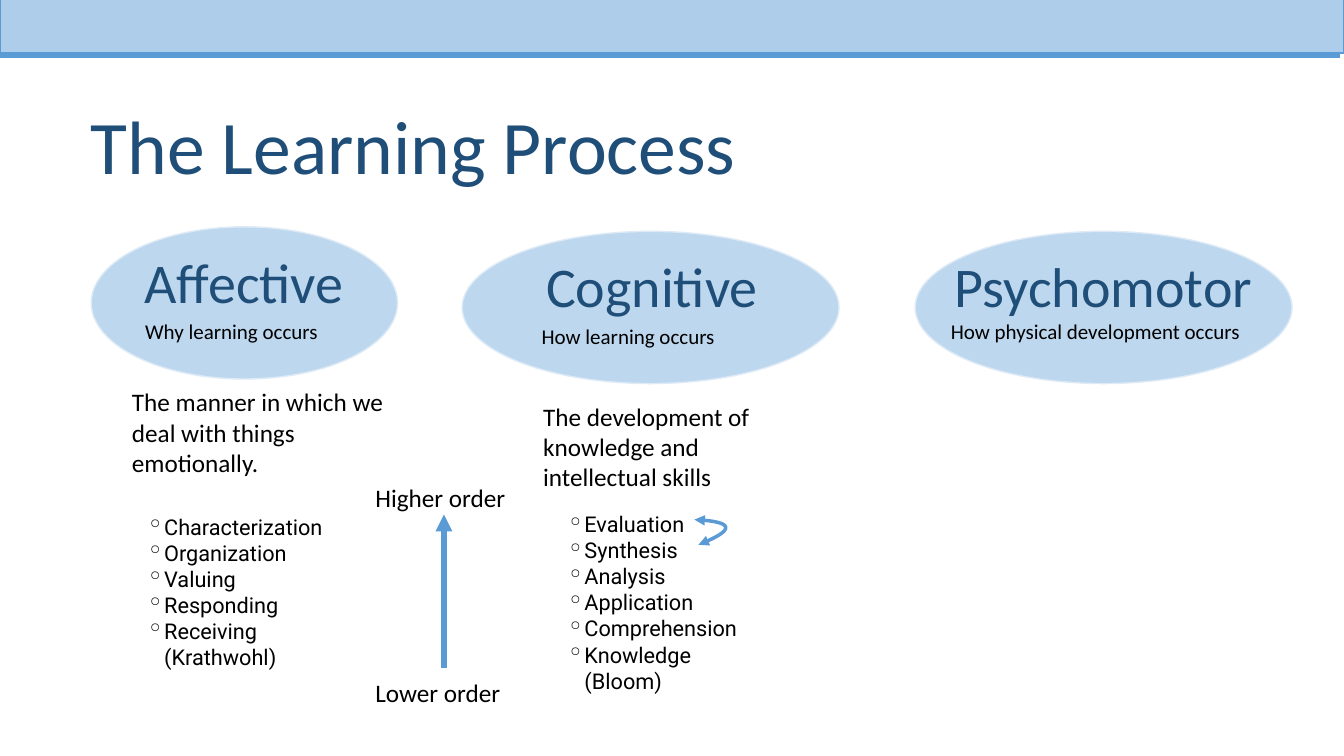
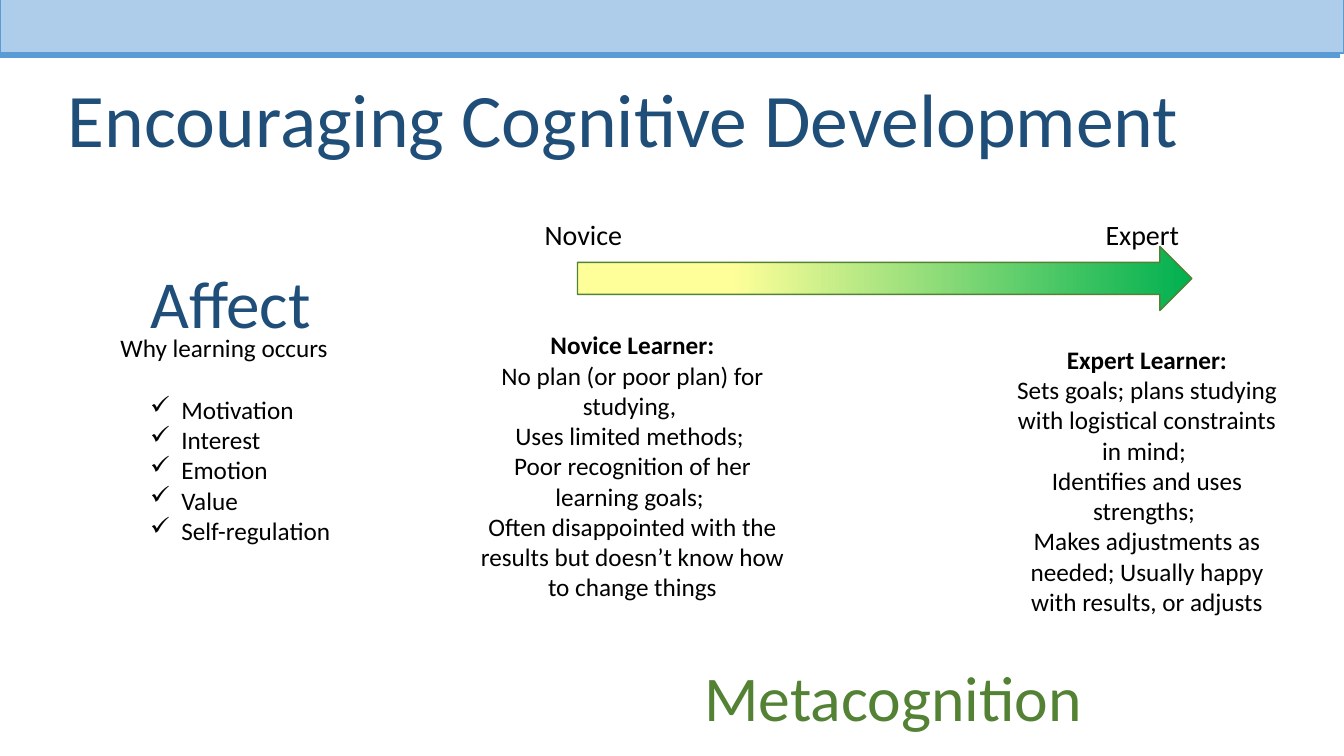
from pptx import Presentation
from pptx import util as u
from pptx.dml.color import RGBColor
from pptx.enum import shapes, text
from pptx.oxml.ns import qn
from lxml import etree

PX = 9144
COLORS = {"navy": "1F4E79", "black": "000000", "blue": "5B9BD5", "band": "ADCDEA",
          "oval": "BDD7EE", "rim": "DEEBF7", "green": "548235",
          "expert": "00B050", "novice": "FFFF99"}

BAND = (0, -2, 2667, 107)
BAND_RULE = (-7, 107, 2659, 107)
TITLE_SIZE = 108

DOMAINS = [
    {"oval": (181, 450, 608, 302),
     "name": ("Affective", (215, 481, 539, 149)),
     "gist": ("Why learning occurs", (278, 622, 396, 69)),
     "meaning": ("The manner in which we deal with things emotionally.", (252, 757, 522, 195)),
     "levels": (["Characterization", "Organization", "Valuing", "Responding",
                 "Receiving \n(Krathwohl)"], (266, 1009, 397, 328))},
    {"oval": (917, 459, 748, 302),
     "name": ("Cognitive", (991, 490, 606, 149)),
     "gist": ("How learning occurs", (1065, 632, 398, 69)),
     "meaning": ("The development of knowledge and intellectual skills", (1068, 786, 522, 195)),
     "levels": (["Evaluation", "Synthesis", "Analysis", "Application", "Comprehension",
                 "Knowledge\n(Bloom)"], (1100, 1004, 387, 380))},
    {"oval": (1816, 459, 748, 302),
     "name": ("Psychomotor", (1791, 490, 798, 149)),
     "gist": ("How physical development occurs", (1877, 622, 673, 69))},
]
ORDER_LABELS = [("Higher order", (735, 947, 303, 78)), ("Lower order", (735, 1333, 293, 78))]
ORDER_ARROW = (881, 1326, 881, 1021)
SWAP_CURVE = [(1378, 1031), (1458, 1035), (1461, 1051), (1386, 1081)]
CURVE_STEPS = 20

SCALE_ARROW = (1146, 489, 1219, 127)
SCALE_LABELS = [("Novice", (1071, 422, 188, 85)), ("Expert", (2184, 422, 184, 85))]
LEARNERS = [
    ("Novice Learner:", (943, 644, 624, 603),
     ["No plan (or poor plan) for studying, ",
      "Uses limited methods; ",
      "Poor recognition of her learning goals; ",
      "Often disappointed with the results but doesn’t know how to change things"]),
    ("Expert Learner:", (1998, 673, 556, 545),
     ["Sets goals; plans studying with logistical constraints in mind; ",
      "Identifies and uses strengths; ",
      "Makes adjustments as needed; Usually happy with results, or adjusts"]),
]
AFFECT_FACTORS = ["Motivation", "Interest", "Emotion", "Value", "Self-regulation"]


def emu(values):
    return [round(value * PX) for value in values]


def rgb(name):
    return RGBColor.from_string(COLORS[name])


def set_line(shape, color, width):
    shape.line.color.rgb = rgb(color)
    shape.line.width = u.Pt(width)


def add_heads(shape, *ends):
    outline = shape.element.spPr.find(qn("a:ln"))
    for end in ends:
        etree.SubElement(outline, qn(f"a:{end}"), type="triangle")


def add_block(page, kind, area, fill, line):
    shape = page.shapes.add_shape(kind, *emu(area))
    shape.shadow.inherit = False
    if fill:
        shape.fill.solid()
        shape.fill.fore_color.rgb = rgb(fill)
    set_line(shape, line, 2)
    return shape


def add_rule(page, ends, width):
    rule = page.shapes.add_connector(shapes.MSO_CONNECTOR.STRAIGHT, *emu(ends))
    set_line(rule, "blue", width)
    etree.SubElement(rule.element.spPr, qn("a:effectLst"))
    return rule


def add_text(page, lines, area, size, color="black", center=False, font="Calibri",
             bullet=None, indent=0, hang=0, bold_first=False):
    box = page.shapes.add_textbox(*emu(area))
    frame = box.text_frame
    frame.word_wrap = True
    frame.margin_left = frame.margin_right = frame.margin_top = frame.margin_bottom = 10 * PX
    for index, line in enumerate([lines] if isinstance(lines, str) else lines):
        para = frame.add_paragraph() if index else frame.paragraphs[0]
        if center:
            para.alignment = text.PP_ALIGN.CENTER
        if bullet:
            props = para._p.get_or_add_pPr()
            props.set("marL", str(indent * PX))
            props.set("indent", str(-hang * PX))
            etree.SubElement(props, qn("a:buChar"), char=bullet)
        for part, words in enumerate(line.split("\n")):
            if part:
                para.add_line_break()
            span = para.add_run()
            span.text = words
            span.font.name = font
            span.font.size = u.Pt(size)
            span.font.bold = bold_first and index == 0
            span.font.color.rgb = rgb(color)


def add_page(deck, title, area):
    page = deck.slides.add_slide(deck.slide_layouts[6])
    add_rule(page, BAND_RULE, 11)
    add_block(page, shapes.MSO_SHAPE.RECTANGLE, BAND, "band", "blue")
    add_text(page, title, area, TITLE_SIZE, "navy")
    return page


def add_swap_curve(page):
    points = []
    for step in range(CURVE_STEPS + 1):
        t = step / CURVE_STEPS
        weights = ((1 - t) ** 3, 3 * t * (1 - t) ** 2, 3 * t ** 2 * (1 - t), t ** 3)
        points.append(emu(sum(w * c for w, c in zip(weights, axis)) for axis in zip(*SWAP_CURVE)))
    builder = page.shapes.build_freeform(*points[0])
    builder.add_line_segments(points[1:], close=False)
    curve = builder.convert_to_shape()
    curve.shadow.inherit = False
    curve.fill.background()
    set_line(curve, "blue", 5)
    add_heads(curve, "headEnd", "tailEnd")


def build_process(deck):
    page = add_page(deck, "The Learning Process", (170, 187, 1797, 194))
    for domain in DOMAINS:
        add_block(page, shapes.MSO_SHAPE.OVAL, domain["oval"], "oval", "rim")
        add_text(page, *domain["name"], 80, "navy", center=True)
        add_text(page, *domain["gist"], 30)
        if "levels" in domain:
            add_text(page, *domain["meaning"], 36)
            add_text(page, *domain["levels"], 31, font="Roboto", bullet="◦", indent=50, hang=35)
    add_heads(add_rule(page, ORDER_ARROW, 8), "tailEnd")
    for label, area in ORDER_LABELS:
        add_text(page, label, area, 36)
    add_swap_curve(page)


def build_development(deck):
    page = add_page(deck, "Encouraging Cognitive Development", (125, 132, 2467, 194))
    arrow = add_block(page, shapes.MSO_SHAPE.RIGHT_ARROW, SCALE_ARROW, None, "green")
    arrow.fill.gradient()
    arrow.fill.gradient_angle = 180
    for stop, (place, color) in zip(arrow.fill.gradient_stops, [(0, "expert"), (0.75, "novice")]):
        stop.position = place
        stop.color.rgb = rgb(color)
    for label, area in SCALE_LABELS:
        add_text(page, label, area, 40)
    for heading, area, habits in LEARNERS:
        add_text(page, [heading, *habits], area, 36, center=True, bold_first=True)
    add_text(page, "Metacognition", (1388, 1295, 1028, 166), 91, "green")
    add_text(page, "Affect", (188, 509, 539, 174), 96, "navy", center=True)
    add_text(page, "Why learning occurs", (229, 650, 471, 78), 36)
    add_text(page, AFFECT_FACTORS, (288, 772, 415, 312), 36, bullet="✓", indent=62, hang=62)


def main():
    deck = Presentation()
    deck.slide_width, deck.slide_height = emu((2667, 1500))
    build_process(deck)
    build_development(deck)
    deck.save("out.pptx")


if __name__ == "__main__":
    main()
